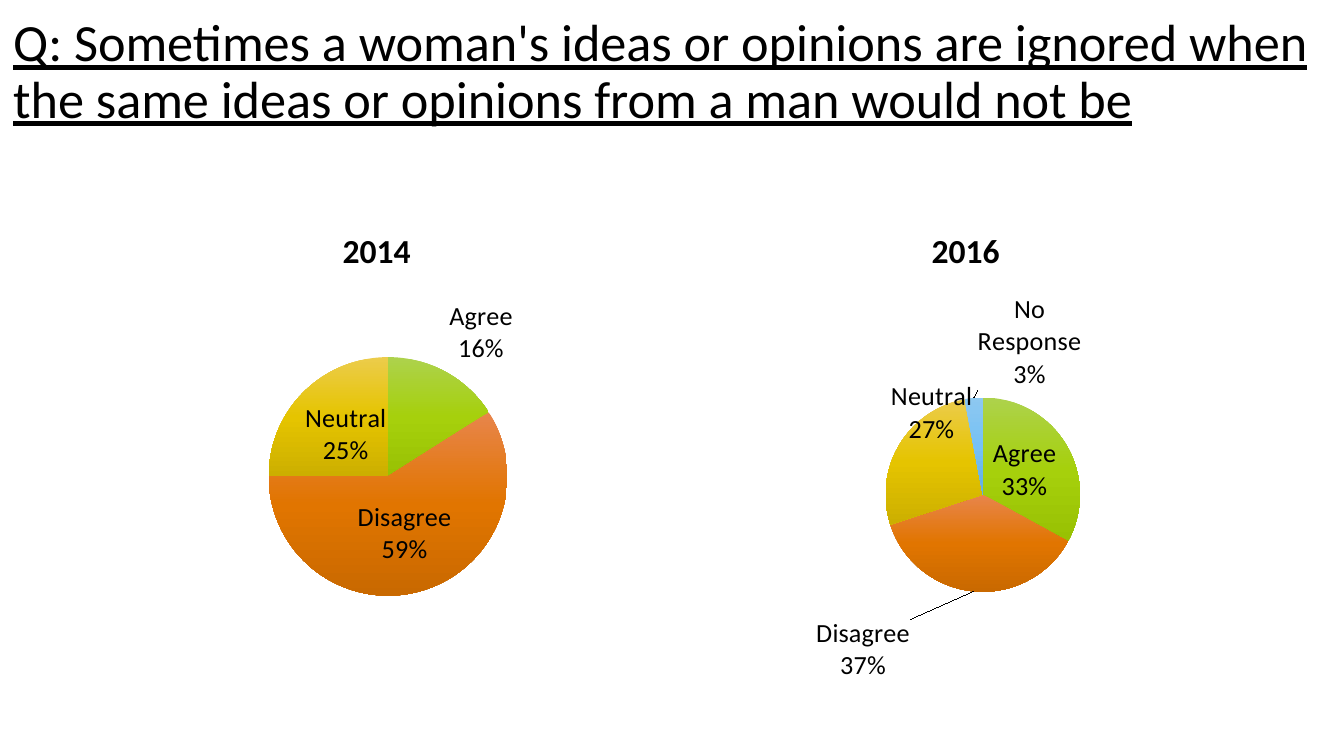
"""Build a survey slide that compares two pie charts."""
from dataclasses import dataclass, field

from lxml import etree
from pptx import Presentation
from pptx.chart.data import CategoryChartData
from pptx.dml.color import RGBColor
from pptx.enum.chart import XL_CHART_TYPE, XL_LABEL_POSITION
from pptx.enum.text import MSO_ANCHOR, PP_ALIGN
from pptx.oxml import parse_xml
from pptx.oxml.ns import nsdecls, qn
from pptx.util import Cm, Pt

PIE = XL_CHART_TYPE.PIE
INSIDE = XL_LABEL_POSITION.CENTER
OUTSIDE = XL_LABEL_POSITION.OUTSIDE_END
MIDDLE, BOTTOM = MSO_ANCHOR.MIDDLE, MSO_ANCHOR.BOTTOM
LEFT, CENTER = PP_ALIGN.LEFT, PP_ALIGN.CENTER


@dataclass(frozen=True)
class Theme:
    """Fonts, type sizes in points and colours."""

    font: str = "Calibri"
    title: int = 28
    head: int = 18
    label: int = 14
    ink: str = "000000"
    paper: str = "FFFFFF"
    fills: tuple[str, ...] = ("A2C816", "E07602", "E4C402", "7DC1EF")


@dataclass(frozen=True)
class Tag:
    """A label outside its slice, shifted by a share of the chart."""

    index: int
    shift: tuple[float, float] = (0, 0)


@dataclass(frozen=True)
class Poll:
    """One year of answers, in a column of the slide."""

    year: str
    left: float
    width: float
    values: tuple[int | None, ...]
    plot: tuple[float, float, float, float]
    tags: list[Tag] = field(default_factory=list)


THEME = Theme()
ANSWERS = ("Agree", "Disagree", "Neutral", "No Response")
QUESTION = ("Q: Sometimes a woman's ideas or opinions are ignored when "
            "the same ideas or opinions from a man would not be")
POLLS = (
    Poll("2014", 1.75, 10.74, (16, 59, 25, None), (0.31, 0.2, 0.42, 0.59),
         [Tag(0)]),
    Poll("2016", 12.85, 10.8, (33, 37, 27, 3), (0.36, 0.3, 0.34, 0.48),
         [Tag(1, (-0.11, 0.05)), Tag(2, (0.14, 0.01)), Tag(3, (0.19, 0))]),
)


def style(font, size: int, bold: bool = False, line: bool = False) -> None:
    """Set the look of a font."""
    font.name, font.size = THEME.font, Pt(size)
    font.bold, font.underline = bold, line
    font.color.rgb = RGBColor.from_string(THEME.ink)


def write(slide, text: str, box: tuple[float, ...], *, size: int,
          bold: bool = False, line: bool = False,
          align: PP_ALIGN = LEFT, anchor: MSO_ANCHOR = MIDDLE) -> None:
    """Add a text box measured in centimetres."""
    frame = slide.shapes.add_textbox(*map(Cm, box)).text_frame
    frame.word_wrap, frame.vertical_anchor = True, anchor
    para = frame.paragraphs[0]
    para.alignment, para.line_spacing = align, 0.9
    run = para.add_run()
    run.text = text
    style(run.font, size, bold, line)


def layout(inner: bool = False, **spots: float):
    """Return a manual layout element."""
    parts = ""
    if inner:
        parts = ('<c:layoutTarget val="inner"/>'
                 '<c:xMode val="edge"/><c:yMode val="edge"/>')
    parts += "".join(f'<c:{key} val="{val}"/>' for key, val in spots.items())
    return parse_xml(f'<c:layout {nsdecls("c")}><c:manualLayout>{parts}'
                     '</c:manualLayout></c:layout>')


def shade(point, color: str) -> None:
    """Fill a slice with a soft vertical gradient of its colour."""
    stops = ((0, 103, 102, "tint", 94), (50, 110, 100, "shade", 100),
             (100, 120, 99, "shade", 78))
    parts = "".join(
        f'<a:gs pos="{pos}000"><a:srgbClr val="{color}">'
        f'<a:satMod val="{sat}000"/><a:lumMod val="{lum}000"/>'
        f'<a:{kind} val="{amount}000"/></a:srgbClr></a:gs>'
        for pos, sat, lum, kind, amount in stops)
    point.format.fill.solid()
    solid = point.format.fill._xPr.find(qn("a:solidFill"))
    solid.getparent().replace(solid, parse_xml(
        f'<a:gradFill {nsdecls("a")} rotWithShape="1"><a:gsLst>{parts}'
        '</a:gsLst><a:lin ang="5400000" scaled="0"/></a:gradFill>'))
    point.format.line.fill.background()


def split(node) -> None:
    """Show the answer above its percentage."""
    for key, val in (("Val", 0), ("CatName", 1), ("Percent", 1)):
        node.find(qn(f"c:show{key}")).set("val", str(val))
    mark = etree.Element(qn("c:separator"))
    mark.text = "\n"
    node.find(qn("c:showBubbleSize")).addnext(mark)


def draw(slide, poll: Poll) -> None:
    """Draw the heading and pie of one year."""
    write(slide, poll.year, (poll.left, 3.51, poll.width, 1.73),
          size=THEME.head, bold=True, align=CENTER, anchor=BOTTOM)
    data = CategoryChartData()
    data.categories = ANSWERS
    data.add_series("Series 1", poll.values)
    chart = slide.shapes.add_chart(
        PIE, Cm(poll.left), Cm(5.21), Cm(poll.width), Cm(7.67), data).chart
    chart.has_title = chart.has_legend = False
    style(chart.font, THEME.head)
    plot = chart.plots[0]
    plot.vary_by_categories = True
    area = chart._chartSpace.chart.plotArea
    for old in area.findall(qn("c:layout")):
        area.remove(old)
    area.insert(0, layout(True, **dict(zip("xywh", poll.plot))))
    series = plot.series[0]
    for index, color in enumerate(THEME.fills):
        shade(series.points[index], color)
    labels = series.data_labels
    style(labels.font, THEME.label)
    labels.number_format, labels.number_format_is_linked = "0%", False
    labels.position = INSIDE
    split(labels._element)
    for tag in poll.tags:
        label = series.points[tag.index].data_label
        style(label.font, THEME.label)
        label.position = OUTSIDE
    for tag, node in zip(poll.tags, labels._element.findall(qn("c:dLbl"))):
        split(node)
        if any(tag.shift):
            spot = layout(**dict(zip("xy", tag.shift)))
            node.find(qn("c:idx")).addnext(spot)


def main() -> None:
    """Build and save the slide."""
    deck = Presentation()
    deck.slide_width, deck.slide_height = Cm(25.4), Cm(14.29)
    slide = deck.slides.add_slide(deck.slide_layouts[6])
    back = slide.background.fill
    back.solid()
    back.fore_color.rgb = RGBColor.from_string(THEME.paper)
    write(slide, QUESTION, (0, 0, 25.4, 2.77), size=THEME.title, line=True)
    for poll in POLLS:
        draw(slide, poll)
    deck.save("out.pptx")


if __name__ == "__main__":
    main()
